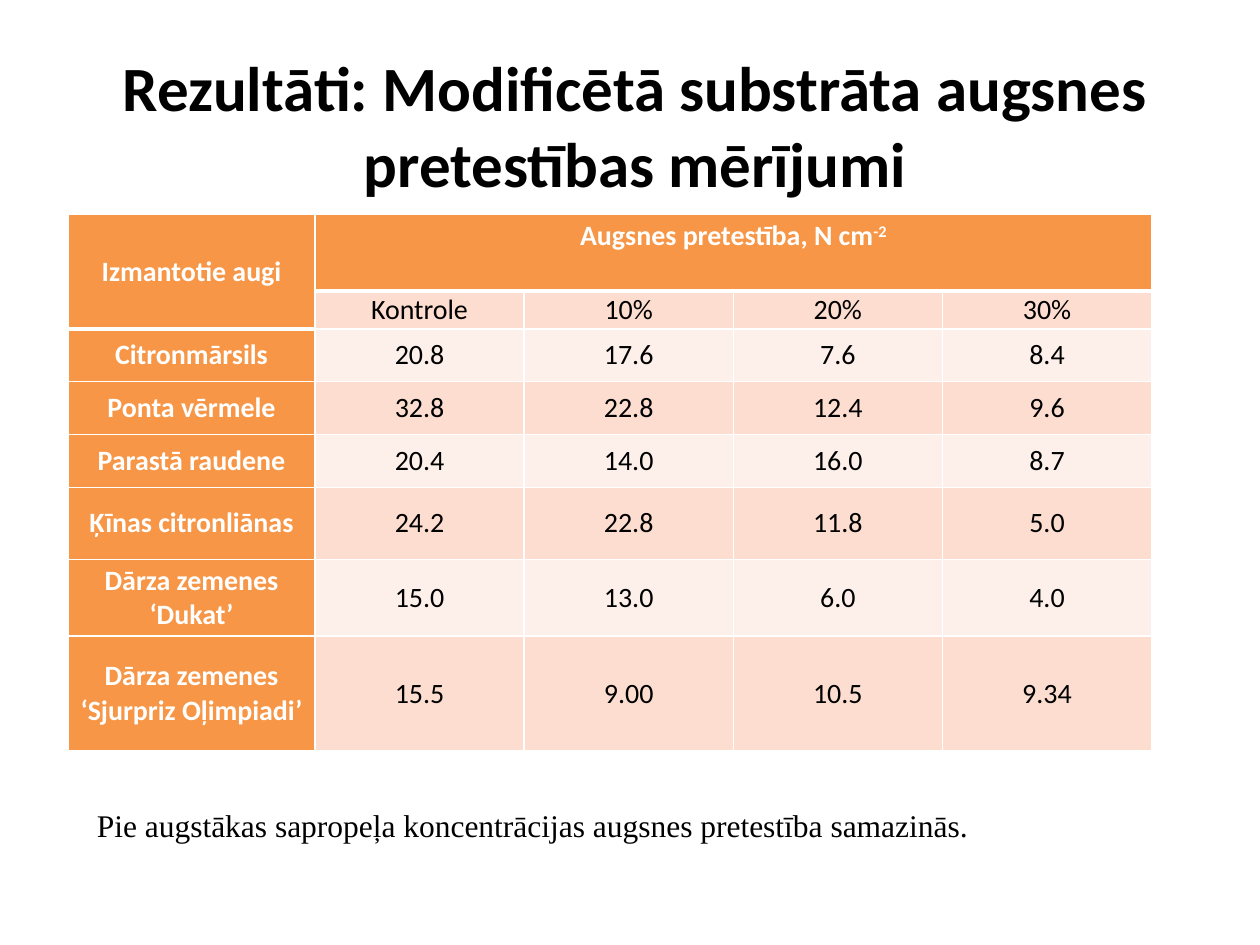
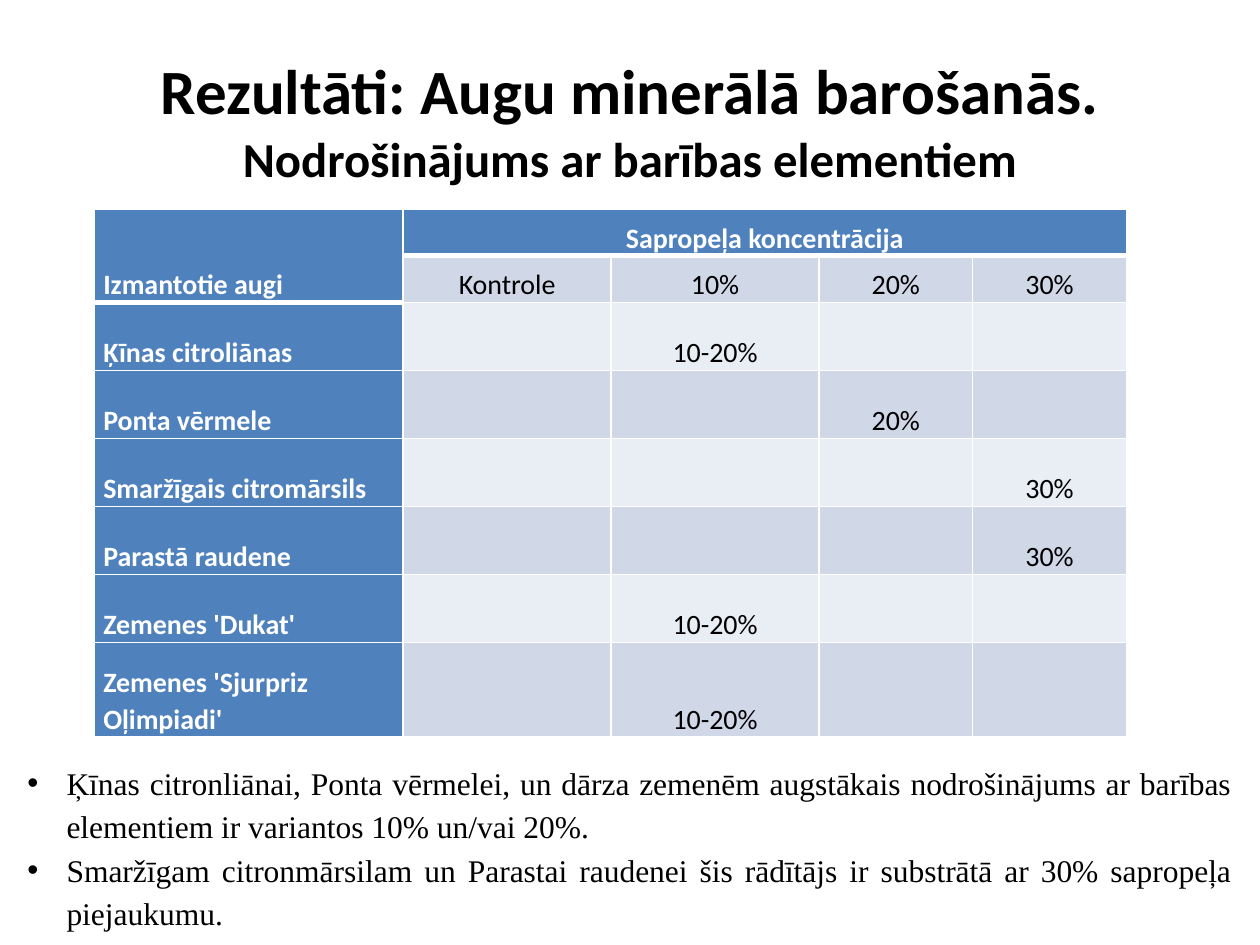
"""Two result slides: soil resistance and plant mineral nutrition."""
from lxml.etree import SubElement
from pptx import Presentation
from pptx.dml.color import RGBColor as RGB
from pptx.enum.text import MSO_ANCHOR as ANCHOR, MSO_AUTO_SIZE as FIT, PP_ALIGN as AL
from pptx.oxml.ns import qn
from pptx.util import Inches, Pt

C = {
    "text": "000000", "white": "FFFFFF",
    "orange": "F79646", "orange_dark": "FCDDCF", "orange_light": "FDEFE9",
    "blue": "4F81BD", "blue_dark": "D0D8E8", "blue_light": "E9EDF4",
}
HEAD, NOTE = "Calibri", "Times New Roman"
DOSES = ["Kontrole", "10%", "20%", "30%"]

prs = Presentation()
prs.slide_width, prs.slide_height = Inches(10), Inches(7.5)
U = prs.slide_width // 100


def add_run(p, text, size, font=HEAD, color="text", bold=False):
    r = p.add_run()
    r.text = text
    r.font.size, r.font.name, r.font.bold = Pt(size), font, bold
    r.font.color.rgb = RGB.from_string(C[color])
    return r


def add_border(cell, side, width):
    ln = SubElement(cell._tc.get_or_add_tcPr(), qn(f"a:ln{side}"), w=str(Pt(width)))
    SubElement(SubElement(ln, qn("a:solidFill")), qn("a:srgbClr"), val=C["white"])


slides = [
    {
        "title": [("Rezultāti: Modificētā substrāta augsnes pretestības mērījumi", 36)],
        "title_at": (5.4, 3.6),
        "hue": "orange", "table_at": (5.4, 17),
        "cols": [19.6] + [16.6] * 4,
        "rows": [6.1, 3, 4.2, 4.2, 4.2, 5.7, 6.1, 9.1],
        "anchor": ANCHOR.MIDDLE, "label_align": AL.CENTER, "spacing": 1,
        "header": "Augsnes pretestība, N cm", "power": "-2",
        "data": [
            ["Citronmārsils", "20.8", "17.6", "7.6", "8.4"],
            ["Ponta vērmele", "32.8", "22.8", "12.4", "9.6"],
            ["Parastā raudene", "20.4", "14.0", "16.0", "8.7"],
            ["Ķīnas citronliānas", "24.2", "22.8", "11.8", "5.0"],
            ["Dārza zemenes ‘Dukat’", "15.0", "13.0", "6.0", "4.0"],
            ["Dārza zemenes ‘Sjurpriz Oļimpiadi’", "15.5", "9.00", "10.5", "9.34"],
        ],
        "note_at": (6.7, 63.5, 91.3, 4), "bullets": False,
        "notes": ["Pie augstākas sapropeļa koncentrācijas augsnes pretestība samazinās."],
    },
    {
        "title": [("Rezultāti: Augu minerālā barošanās.", 36), (" ", 39.6),
                  ("Nodrošinājums ar barības elementiem", 27.9)],
        "title_at": (5, 3),
        "hue": "blue", "table_at": (7.5, 16.6),
        "cols": [24.5, 16.5, 16.5, 12.2, 12.2],
        "rows": [3.7, 3.7] + [5.4] * 5 + [7.5],
        "anchor": ANCHOR.BOTTOM, "label_align": AL.LEFT, "spacing": 1.07,
        "header": "Sapropeļa koncentrācija", "power": "",
        "data": [
            ["Ķīnas citroliānas", "", "10-20%", "", ""],
            ["Ponta vērmele", "", "", "20%", ""],
            ["Smaržīgais citromārsils", "", "", "", "30%"],
            ["Parastā raudene", "", "", "", "30%"],
            ["Zemenes 'Dukat'", "", "10-20%", "", ""],
            ["Zemenes 'Sjurpriz Oļimpiadi'", "", "10-20%", "", ""],
        ],
        "note_at": (1.2, 59.7, 97.6, 14.7), "bullets": True,
        "notes": [
            "Ķīnas citronliānai, Ponta vērmelei, un dārza zemenēm augstākais "
            "nodrošinājums ar barības elementiem ir variantos 10% un/vai 20%.",
            "Smaržīgam citronmārsilam un Parastai raudenei šis rādītājs ir "
            "substrātā ar 30% sapropeļa piejaukumu.",
        ],
    },
]

for d in slides:
    s = prs.slides.add_slide(prs.slide_layouts[5])

    title = s.shapes.title
    title.left, title.top = (int(v * U) for v in d["title_at"])
    title.width, title.height = 90 * U, int(12.5 * U)
    tf = title.text_frame
    tf.auto_size, tf.word_wrap, tf.vertical_anchor = FIT.NONE, True, ANCHOR.MIDDLE
    p = tf.paragraphs[0]
    p.alignment = AL.CENTER
    for text, size in d["title"]:
        add_run(p, text, size, bold=True)

    box = [int(v * U) for v in (*d["table_at"], sum(d["cols"]), sum(d["rows"]))]
    table = s.shapes.add_table(len(d["rows"]), len(d["cols"]), *box).table
    for col, width in zip(table.columns, d["cols"]):
        col.width = int(width * U)
    for row, height in zip(table.rows, d["rows"]):
        row.height = int(height * U)
    table.cell(0, 0).merge(table.cell(1, 0))
    table.cell(0, 1).merge(table.cell(0, 4))

    grid = [["Izmantotie augi", d["header"], "", "", ""], ["", *DOSES], *d["data"]]
    for i, texts in enumerate(grid):
        for j, text in enumerate(texts):
            cell = table.cell(i, j)
            label, strong = j == 0, i == 0 or j == 0
            cell.margin_left = cell.margin_right = Inches(0.07)
            cell.margin_top = cell.margin_bottom = 0
            cell.vertical_anchor = d["anchor"]
            add_border(cell, "L", 1)
            add_border(cell, "R", 1)
            add_border(cell, "T", 3 if i == label + 1 else 1)
            add_border(cell, "B", 3 if i <= label else 1)
            shade = "" if strong else "_light" if i % 2 == 0 else "_dark"
            cell.fill.solid()
            cell.fill.fore_color.rgb = RGB.from_string(C[d["hue"] + shade])
            if text:
                p = cell.text_frame.paragraphs[0]
                p.alignment = d["label_align"] if label else AL.CENTER
                p.line_spacing = d["spacing"]
                add_run(p, text, 16, color="white" if strong else "text", bold=strong)
    if d["power"]:
        cell = table.cell(0, 1)
        cell.vertical_anchor, cell.margin_top = ANCHOR.TOP, Inches(0.04)
        r = add_run(cell.text_frame.paragraphs[0], d["power"], 16, color="white", bold=True)
        r._r.get_or_add_rPr().set("baseline", "30000")

    tf = s.shapes.add_textbox(*(int(v * U) for v in d["note_at"])).text_frame
    tf.word_wrap, tf.auto_size = True, FIT.SHAPE_TO_FIT_TEXT
    for k, note in enumerate(d["notes"]):
        p = tf.add_paragraph() if k else tf.paragraphs[0]
        add_run(p, note, 18, font=NOTE)
        if d["bullets"]:
            p.alignment, p.line_spacing = AL.JUSTIFY, 1.15
            pPr = p._p.get_or_add_pPr()
            pPr.set("marL", str(Inches(0.31)))
            pPr.set("indent", str(-Inches(0.31)))
            SubElement(pPr, qn("a:buFont"), typeface="Arial")
            SubElement(pPr, qn("a:buChar"), char="•")

prs.save("out.pptx")
